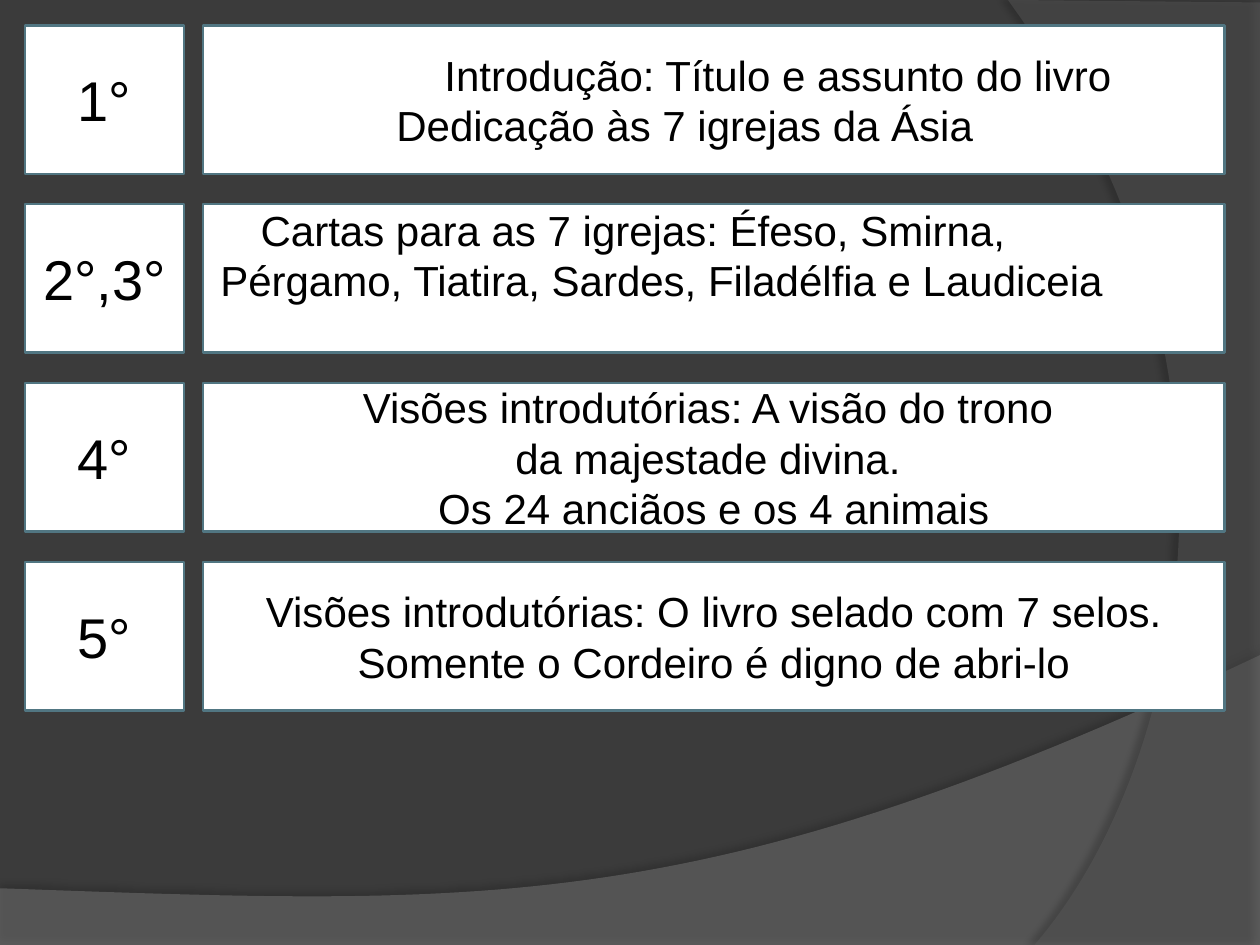
from dataclasses import dataclass

from lxml.etree import SubElement
from pptx import Presentation
from pptx.dml.color import RGBColor
from pptx.enum.shapes import MSO_SHAPE as Shape
from pptx.enum.text import MSO_ANCHOR as Anchor, PP_ALIGN as Align
from pptx.oxml.ns import qn
from pptx.util import Emu, Inches, Pt

COLORS = {
    "back": "3B3B3B",
    "hill": "7F7F7F",
    "arc": "5E5E5E",
    "card": "FFFFFF",
    "edge": "517682",
    "text": "000000",
    "shade": "000000",
}
FONT = "Arial"
TOP, PITCH, HEIGHT = 0.2, 1.42, 1.18
Point = tuple[float, float]


@dataclass
class Line:
    text: str
    indent: float = 0


@dataclass
class Row:
    label: str
    lines: list[Line]
    align: Align = Align.CENTER
    right: float = 0.1
    bottom: float = 0.05


@dataclass
class Wave:
    color: str
    alpha: int
    points: list[Point]
    shade: int
    blur: float
    dist: float
    angle: int


def rgb(name: str) -> RGBColor:
    return RGBColor.from_string(COLORS[name])


def curve(a: Point, b: Point, c: Point, d: Point, steps: int = 60) -> list[Point]:
    """Points along a cubic Bezier curve from a to d."""
    def at(t: float, i: int) -> float:
        u = 1 - t
        return (u**3 * a[i] + 3 * u * u * t * b[i]
                + 3 * u * t * t * c[i] + t**3 * d[i])

    return [(at(n / steps, 0), at(n / steps, 1)) for n in range(steps + 1)]


def draw_wave(slide, wave: Wave) -> None:
    first, *rest = [(Inches(x), Inches(y)) for x, y in wave.points]
    pen = slide.shapes.build_freeform(*first)
    pen.add_line_segments(rest, close=True)
    shape = pen.convert_to_shape()
    shape.fill.solid()
    shape.fill.fore_color.rgb = rgb(wave.color)
    shape.line.fill.background()
    shape.shadow.inherit = False
    props = shape.element.spPr
    tint = props.find(qn("a:solidFill")).find(qn("a:srgbClr"))
    SubElement(tint, qn("a:alpha"), val=str(wave.alpha * 1000))
    shadow = SubElement(
        props.find(qn("a:effectLst")), qn("a:outerShdw"),
        blurRad=str(Pt(wave.blur)), dist=str(Pt(wave.dist)),
        dir=str(wave.angle * 60000), rotWithShape="0")
    dark = SubElement(shadow, qn("a:srgbClr"), val=COLORS["shade"])
    SubElement(dark, qn("a:alpha"), val=str(wave.shade * 1000))


def write(frame, lines: list[Line], *, size: int,
          align: Align = Align.CENTER) -> None:
    frame.word_wrap = True
    frame.vertical_anchor = Anchor.MIDDLE
    for n, line in enumerate(lines):
        para = frame.add_paragraph() if n else frame.paragraphs[0]
        para.alignment = align
        if line.indent:
            para._p.get_or_add_pPr().set("marL", str(Inches(line.indent)))
        run = para.add_run()
        run.text = line.text
        run.font.name = FONT
        run.font.size = Pt(size)
        run.font.color.rgb = rgb("text")


def add_card(slide, left: float, top: float, width: float):
    card = slide.shapes.add_shape(
        Shape.RECTANGLE, Inches(left), Inches(top), Inches(width), Inches(HEIGHT))
    card.shadow.inherit = False
    card.fill.solid()
    card.fill.fore_color.rgb = rgb("card")
    card.line.color.rgb = rgb("edge")
    card.line.width = Pt(1.5)
    return card


def draw_row(slide, row: Row, top: float) -> None:
    frame = add_card(slide, 1.61, top, 8.11).text_frame
    frame.margin_right = Inches(row.right)
    frame.margin_bottom = Inches(row.bottom)
    if row.bottom > 0.05:
        frame.margin_top = Emu(0)
    write(frame, row.lines, size=24, align=row.align)
    label = add_card(slide, 0.2, top, 1.26)
    write(label.text_frame, [Line(row.label)], size=32)


WAVES = [
    Wave("hill", 45,
         [(0, 7.5), (10, 7.5),
          *curve((10, 5.2), (5.59, 7.29), (3.91, 7.19), (0, 7.05))],
         shade=35, blur=4, dist=3.5, angle=270),
    Wave("arc", 40,
         [(10, 0.02), (10, 7.5),
          *curve((8.21, 7.5), (9.35, 6.19), (10.18, 3), (8, 0))],
         shade=45, blur=4, dist=4, angle=180),
]
ROWS = [
    Row("1°", [Line("Introdução: Título e assunto do livro", 1.48),
               Line("Dedicação às 7 igrejas da Ásia")], right=0.56),
    Row("2°,3°", [Line("Cartas para as 7 igrejas: Éfeso, Smirna,", 0.36),
                  Line("Pérgamo, Tiatira, Sardes, Filadélfia e Laudiceia", 0.04)],
        align=Align.LEFT, bottom=0.38),
    Row("4°", [Line("Visões introdutórias: A visão do trono"),
               Line("da majestade divina."),
               Line("Os 24 anciãos e os 4 animais", 0.09)], right=0.19),
    Row("5°", [Line("Visões introdutórias: O livro selado com 7 selos."),
               Line("Somente o Cordeiro é digno de abri-lo")]),
]


def main() -> None:
    deck = Presentation()
    deck.slide_width, deck.slide_height = Inches(10), Inches(7.5)
    slide = deck.slides.add_slide(deck.slide_layouts[6])
    back = slide.background.fill
    back.solid()
    back.fore_color.rgb = rgb("back")
    for wave in WAVES:
        draw_wave(slide, wave)
    for n, row in enumerate(ROWS):
        draw_row(slide, row, TOP + n * PITCH)
    deck.save("out.pptx")


if __name__ == "__main__":
    main()
